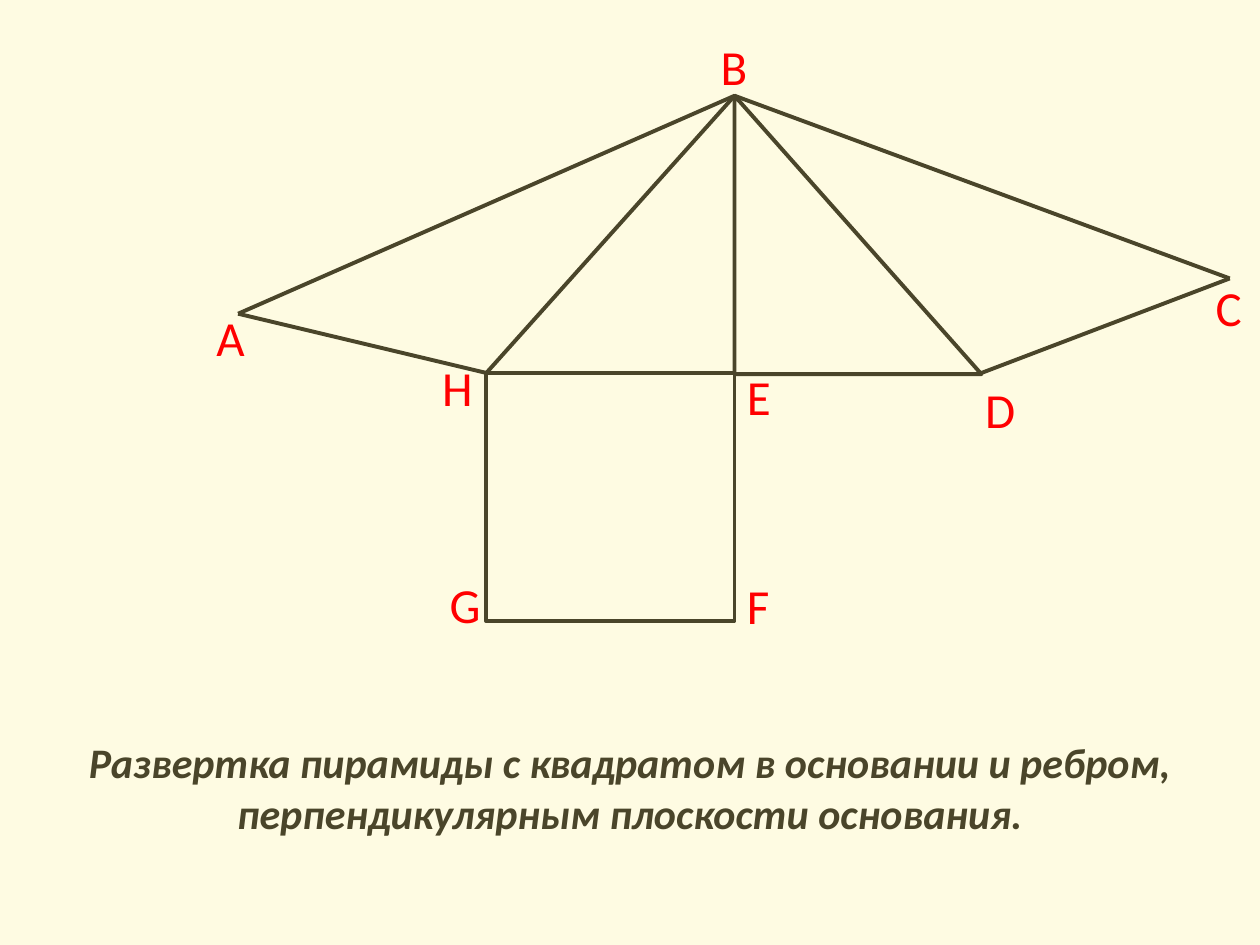
"""Draw the net of a square pyramid with one edge perpendicular to its base."""
import pptx
import pptx.util
import pptx.dml.color
import pptx.enum.shapes
import pptx.enum.text
import pptx.oxml.ns
import lxml.etree

Inches, Pt = pptx.util.Inches, pptx.util.Pt
SHAPE = pptx.enum.shapes.MSO_SHAPE
BROWN, RED, CREAM = "4A452A", "FF0000", "FEFBE2"

CAPTION = "Развертка пирамиды с квадратом в основании и ребром, перпендикулярным плоскости основания."
POINTS = {
    "A": (1.89, 2.49), "B": (5.83, 0.76), "C": (9.76, 2.21),
    "D": (7.79, 2.96), "H": (3.86, 2.96),
}
EDGES = ["BH", "DC", "BC", "HA", "BA"]
OUTLINES = [
    (SHAPE.RECTANGLE, 3.86, 2.96, 1.97, 1.97),
    (SHAPE.RIGHT_TRIANGLE, 5.83, 0.76, 1.96, 2.21),
]
LABELS = [
    ("A", 1.62, 2.39, 0.43), ("B", 5.62, 0.24, 0.41),
    ("C", 9.55, 2.15, 0.41), ("D", 7.72, 2.96, 0.44),
    ("E", 5.83, 2.86, 0.39), ("F", 5.83, 4.52, 0.38),
    ("G", 3.47, 4.51, 0.45), ("H", 3.41, 2.79, 0.45),
]


def color(value):
    return pptx.dml.color.RGBColor.from_string(value)


def set_line(sp):
    sp.line.color.rgb = color(BROWN)
    sp.line.width = Pt(2.25)


def add_text(s, text, box, size, rgb, wrap):
    tf = s.shapes.add_textbox(*map(Inches, box)).text_frame
    tf.word_wrap = wrap
    p = tf.paragraphs[0]
    p.text = text
    p.font.name = "Calibri"
    p.font.size = Pt(size)
    p.font.color.rgb = color(rgb)
    return tf


def main():
    prs = pptx.Presentation()
    prs.slide_width, prs.slide_height = Inches(10), Inches(7.5)
    s = prs.slides.add_slide(prs.slide_layouts[6])
    s.background.fill.solid()
    s.background.fill.fore_color.rgb = color(CREAM)

    p = add_text(s, CAPTION, (0.5, 5.8, 9, 0.9), 24, BROWN, True).paragraphs[0]
    p.alignment = pptx.enum.text.PP_ALIGN.CENTER
    p.font.bold = p.font.italic = True

    for kind, *box in OUTLINES:
        sp = s.shapes.add_shape(kind, *map(Inches, box))
        sp.shadow.inherit = False
        sp.fill.background()
        set_line(sp)

    for start, end in EDGES:
        ends = map(Inches, POINTS[start] + POINTS[end])
        sp = s.shapes.add_connector(pptx.enum.shapes.MSO_CONNECTOR.STRAIGHT, *ends)
        set_line(sp)
        lxml.etree.SubElement(sp._element.spPr, pptx.oxml.ns.qn("a:effectLst"))

    for name, left, top, width in LABELS:
        tf = add_text(s, name, (left, top, width, 0.57), 28, RED, False)
        tf.auto_size = pptx.enum.text.MSO_AUTO_SIZE.SHAPE_TO_FIT_TEXT

    prs.save("out.pptx")


if __name__ == "__main__":
    main()
